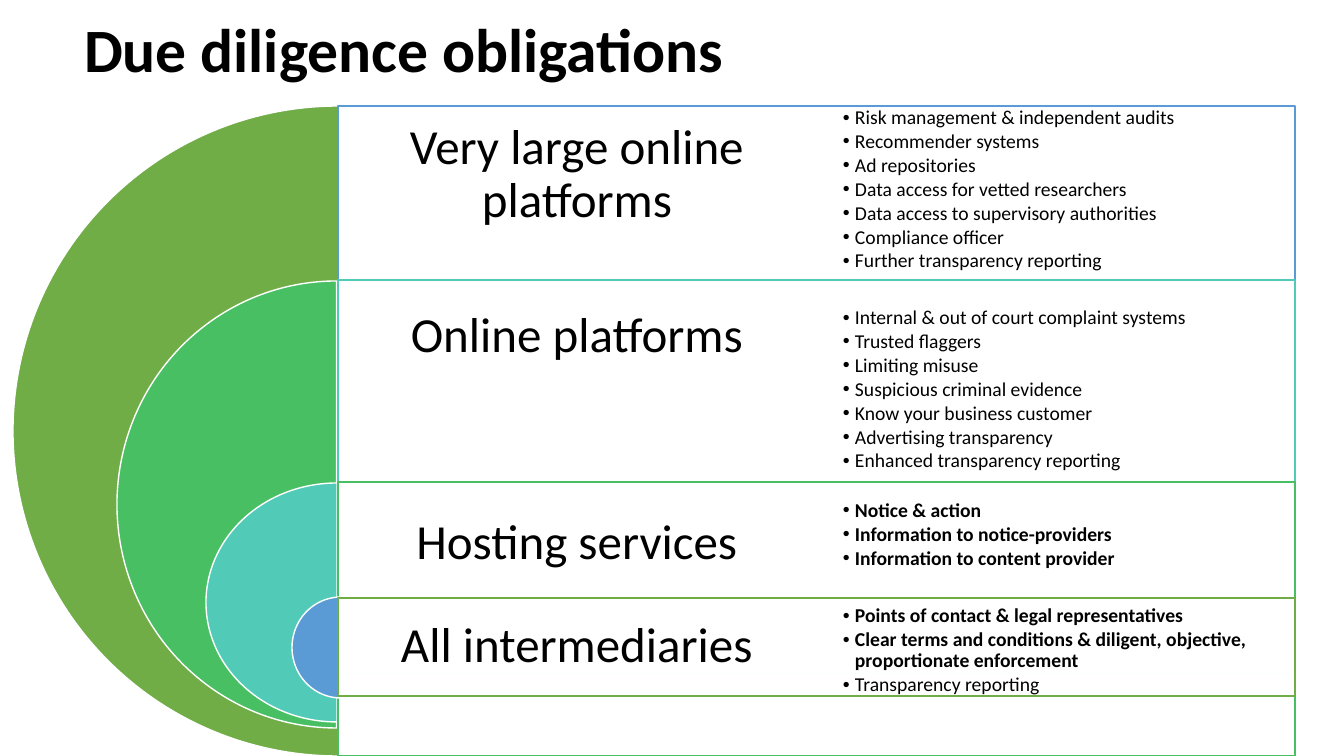
from pptx import Presentation
from pptx.dml.color import RGBColor
from pptx.enum.shapes import MSO_SHAPE as Shape
from pptx.enum.text import MSO_ANCHOR as Anchor, PP_ALIGN as Align
from pptx.oxml.ns import qn
from pptx.util import Emu, Pt
from lxml.etree import SubElement
from dataclasses import dataclass

# Content: label, list items as (text, bold)
TITLE = "Due diligence obligations"
TIERS = [
    ("Very large online platforms", [
        ("Risk management & independent audits", False),
        ("Recommender systems", False),
        ("Ad repositories", False),
        ("Data access for vetted researchers", False),
        ("Data access to supervisory authorities", False),
        ("Compliance officer", False),
        ("Further transparency reporting", False)]),
    ("Online platforms", [
        ("Internal & out of court complaint systems", False),
        ("Trusted flaggers", False),
        ("Limiting misuse", False),
        ("Suspicious criminal evidence", False),
        ("Know your business customer", False),
        ("Advertising transparency", False),
        ("Enhanced transparency reporting", False)]),
    ("Hosting services", [
        ("Notice & action", True),
        ("Information to notice-providers", True),
        ("Information to content provider", True)]),
    ("All intermediaries", [
        ("Points of contact & legal representatives", True),
        ("Clear terms and conditions & diligent, objective, "
         "proportionate enforcement", True),
        ("Transparency reporting", False)]),
]

# Geometry in px: pie box, panel top and height, label height, list top
LAYOUT = [
    ((13, 106, 650, 650), 106, 650, 138, 121),
    ((117, 281, 439, 447), 280, 393, 113, 321),
    ((206, 483, 262, 239), 482, 274, 123, 466),
    ((292, 597, 98, 101), 598, 98, 98, 582),
]
SLIDE_W, SLIDE_H = 1344, 756
TITLE_BOX = (74, -20, 1159, 146)
PANEL_LEFT, PANEL_W = 338, 957
COLUMN_W = PANEL_W // 2
LIST_LEFT, LIST_H = PANEL_LEFT + COLUMN_W, 138
LABEL_INSET, LIST_INSET, HANG = 15, 27, 12


@dataclass(frozen=True)
class Theme:
    font: str = "Calibri"
    ink: str = "000000"
    paper: str = "FFFFFF"
    tiers: tuple = ("70AD47", "49BF64", "52CAB8", "5B9BD5")
    title: int = 44
    label: int = 35
    item: int = 14
    item_gap: float = 1.9
    line: int = 1
    leading: float = 0.9
    panel_alpha: int = 90


THEME = Theme()


def px(value):
    return Emu(round(value * 914400 / 100.8))


def place(box):
    return [px(value) for value in box]


def add_outlined(kind, box, fill, line):
    shape = page.shapes.add_shape(kind, *place(box))
    shape.shadow.inherit = False
    shape.fill.solid()
    shape.fill.fore_color.rgb = RGBColor.from_string(fill)
    shape.line.color.rgb = RGBColor.from_string(line)
    shape.line.width = Pt(THEME.line)
    return shape


def add_frame(box, inset):
    frame = page.shapes.add_textbox(*place(box)).text_frame
    frame.word_wrap = True
    frame.vertical_anchor = Anchor.MIDDLE
    frame.margin_left = frame.margin_right = px(inset)
    frame.margin_top = frame.margin_bottom = px(inset)
    return frame


def write(para, text, size, bold=False, align=Align.LEFT):
    para.alignment = align
    para.line_spacing = THEME.leading
    span = para.add_run()
    span.text = text
    span.font.name = THEME.font
    span.font.size = Pt(size)
    span.font.bold = bold
    span.font.color.rgb = RGBColor.from_string(THEME.ink)


def add_bullet(para):
    props = para._p.get_or_add_pPr()
    props.set("marL", str(px(HANG)))
    props.set("indent", str(-px(HANG)))
    SubElement(props, qn("a:buFont")).set("typeface", "Arial")
    SubElement(props, qn("a:buChar")).set("char", "•")


deck = Presentation()
deck.slide_width, deck.slide_height = px(SLIDE_W), px(SLIDE_H)
page = deck.slides.add_slide(deck.slide_layouts[5])

# Title
title = page.shapes.title
title.left, title.top, title.width, title.height = place(TITLE_BOX)
title.text_frame.vertical_anchor = Anchor.MIDDLE
write(title.text_frame.paragraphs[0], TITLE, THEME.title, bold=True)

# Nested half circles with their panels and labels
for (label, _), (pie_box, top, height, label_h, _), fill, line in zip(
        TIERS, LAYOUT, THEME.tiers, reversed(THEME.tiers)):
    pie = add_outlined(Shape.PIE, pie_box, fill, THEME.paper)
    pie.adjustments[0], pie.adjustments[1] = 54, 162  # left half
    panel = add_outlined(Shape.RECTANGLE, (PANEL_LEFT, top, PANEL_W, height),
                         THEME.paper, line)
    color = panel._element.spPr.find(qn("a:solidFill")).find(qn("a:srgbClr"))
    SubElement(color, qn("a:alpha")).set("val", str(THEME.panel_alpha * 1000))
    frame = add_frame((PANEL_LEFT, top, COLUMN_W, label_h), LABEL_INSET)
    write(frame.paragraphs[0], label, THEME.label, align=Align.CENTER)

# Obligation lists
for (_, items), (*_, list_top) in zip(TIERS, LAYOUT):
    frame = add_frame((LIST_LEFT, list_top, COLUMN_W, LIST_H), LIST_INSET)
    for index, (text, bold) in enumerate(items):
        para = frame.add_paragraph() if index else frame.paragraphs[0]
        add_bullet(para)
        para.space_after = Pt(THEME.item_gap)
        write(para, text, THEME.item, bold)

deck.save("out.pptx")
